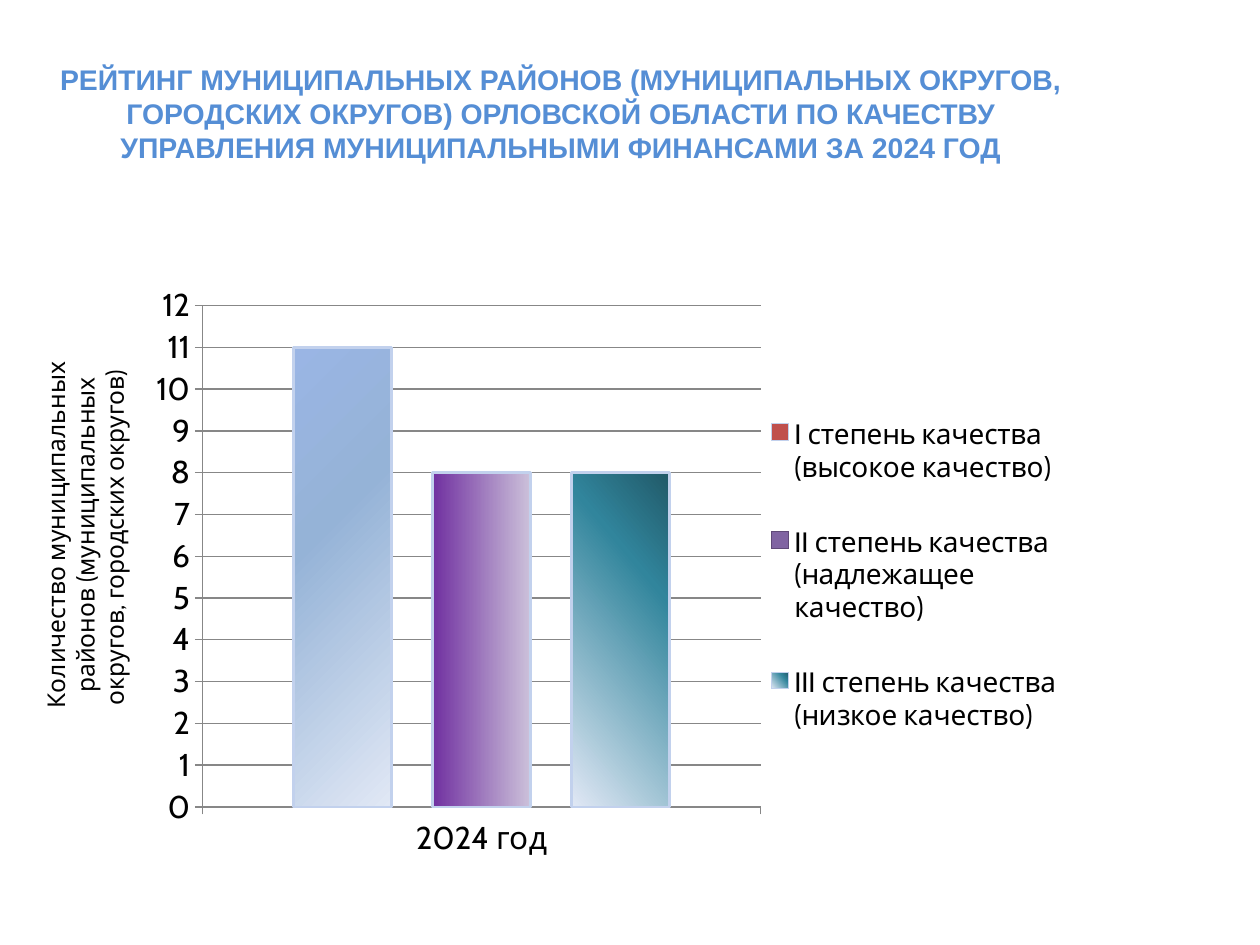
from dataclasses import dataclass

from lxml.etree import SubElement
from pptx import Presentation
from pptx.chart.data import CategoryChartData
from pptx.dml.color import RGBColor
from pptx.enum.chart import XL_CHART_TYPE, XL_LEGEND_POSITION, XL_TICK_MARK
from pptx.enum.text import MSO_ANCHOR, MSO_AUTO_SIZE, PP_ALIGN
from pptx.oxml import parse_xml
from pptx.oxml.ns import nsdecls, qn
from pptx.util import Cm, Pt


@dataclass(frozen=True)
class Theme:
    title_font: str = "Arial"
    chart_font: str = "Cabin"
    title_size: float = 16.2
    chart_size: float = 18
    legend_size: float = 16
    axis_title_size: float = 14
    title: str = "558ED5"
    title_outline: str = "5E457C"
    text: str = "000000"
    background: str = "FFFFFF"
    grid: str = "878787"
    bar_line: str = "C2D1ED"


THEME = Theme()
CHART_WIDTH, CHART_HEIGHT = 19.28, 11.99  # cm

TITLE = ("РЕЙТИНГ МУНИЦИПАЛЬНЫХ РАЙОНОВ (МУНИЦИПАЛЬНЫХ ОКРУГОВ, ГОРОДСКИХ ОКРУГОВ) "
         "ОРЛОВСКОЙ ОБЛАСТИ ПО КАЧЕСТВУ УПРАВЛЕНИЯ МУНИЦИПАЛЬНЫМИ ФИНАНСАМИ ЗА 2024 ГОД")
AXIS_TITLE = "Количество муниципальных районов (муниципальных округов, городских округов) "

# Name, value, series fill (None: gradient), series line, bar gradient, angle
GRADES = [
    ("I степень качества (высокое качество)", 11, "C0504D", THEME.bar_line,
     [(0, "9AB5E4"), (38, "95B3D7"), (100, "E1E8F5")], 45),
    ("II степень качества (надлежащее качество)", 8, "8064A2", "5F4A78",
     [(0, "CCC1DA"), (100, "7030A0"), (100, "E1E8F5")], 180),
    ("III степень качества (низкое качество)", 8, None, THEME.bar_line,
     [(0, "215968"), (29, "31859C"), (100, "E1E8F5")], 140),
]


def color(value):
    return RGBColor.from_string(value)


def style_font(font, name, size, value):
    font.name = name
    font.size = Pt(size)
    font.color.rgb = color(value)


def style_line(line, value, width):
    line.color.rgb = color(value)
    line.width = Pt(width)


def add_text(page, left, top, width, height, text, font, size, value):
    box = page.shapes.add_textbox(Cm(left), Cm(top), Cm(width), Cm(height))
    box.text_frame.word_wrap = True
    para = box.text_frame.paragraphs[0]
    para.alignment = PP_ALIGN.CENTER
    span = para.add_run()
    span.text = text
    style_font(span.font, font, size, value)
    return box, span


def add_title(page):
    box, span = add_text(page, 1.09, 0.53, 20.42, 2.79, TITLE,
                         THEME.title_font, THEME.title_size, THEME.title)
    box.fill.solid()
    box.fill.fore_color.rgb = color(THEME.background)
    frame = box.text_frame
    frame.vertical_anchor = MSO_ANCHOR.BOTTOM
    frame.margin_left = frame.margin_right = Cm(0.05)
    frame.margin_top = frame.margin_bottom = 0
    span.font.bold = True
    # Letter outline
    span.font._element.insert(0, parse_xml(
        f'<a:ln {nsdecls("a")} w="{Pt(0.71)}"><a:solidFill>'
        f'<a:srgbClr val="{THEME.title_outline}"/></a:solidFill></a:ln>'))


def add_axis_title(page):
    box, _ = add_text(page, -2.72, 9.75, 8.89, 2.06, AXIS_TITLE,
                      THEME.chart_font, THEME.axis_title_size, THEME.text)
    box.text_frame.auto_size = MSO_AUTO_SIZE.SHAPE_TO_FIT_TEXT
    box.rotation = 270


def fill_gradient(target, stops, angle):
    """Fill a series or a point; the angle runs clockwise."""
    marks = "".join(f'<a:gs pos="{position * 1000}"><a:srgbClr val="{value}"/></a:gs>'
                    for position, value in stops)
    target.format.fill.background()
    properties = target.format.fill._xPr
    properties.replace(properties.find(qn("a:noFill")), parse_xml(
        f'<a:gradFill {nsdecls("a")} rotWithShape="1"><a:gsLst>{marks}</a:gsLst>'
        f'<a:lin ang="{angle * 60000}" scaled="0"/></a:gradFill>'))


def place(parent, successors, left, top, width, height, inner=False):
    """Fix the plot area or the legend inside the chart, in centimetres."""
    for old in parent.findall(qn("c:layout")):
        parent.remove(old)
    layout = parse_xml(f'<c:layout {nsdecls("c")}/>')
    manual = SubElement(layout, qn("c:manualLayout"))
    entries = [("layoutTarget", "inner")] if inner else []
    entries += [("xMode", "edge"), ("yMode", "edge"),
                ("x", left / CHART_WIDTH), ("y", top / CHART_HEIGHT),
                ("w", width / CHART_WIDTH), ("h", height / CHART_HEIGHT)]
    for tag, value in entries:
        SubElement(manual, qn(f"c:{tag}")).set("val", str(value))
    parent.insert_element_before(layout, *successors)


def style_series(series, fill, line, stops, angle):
    style_line(series.format.line, line, 1.5)
    if fill is None:
        fill_gradient(series, stops, angle)
        return
    series.format.fill.solid()
    series.format.fill.fore_color.rgb = color(fill)
    bar = series.points[0]
    fill_gradient(bar, stops, angle)
    style_line(bar.format.line, THEME.bar_line, 1.5)


def add_rating_chart(page):
    data = CategoryChartData()
    data.categories = ["2024 год"]
    for name, value, *_ in GRADES:
        data.add_series(name, [value])
    chart = page.shapes.add_chart(XL_CHART_TYPE.COLUMN_CLUSTERED, Cm(2.77), Cm(5.54),
                                  Cm(CHART_WIDTH), Cm(CHART_HEIGHT), data).chart
    chart.has_title = False
    style_font(chart.font, THEME.chart_font, THEME.chart_size, THEME.text)

    # Bars
    plot = chart.plots[0]
    plot.vary_by_categories = False
    plot.gap_width = 186
    plot.overlap = -42
    for series, (_, _, *style) in zip(plot.series, GRADES):
        style_series(series, *style)

    # Axes
    counts = chart.value_axis
    counts.minimum_scale, counts.maximum_scale, counts.major_unit = 0, 12, 1
    counts.has_major_gridlines = True
    style_line(counts.major_gridlines.format.line, THEME.grid, 0.75)
    for axis in (chart.category_axis, counts):
        axis.major_tick_mark = XL_TICK_MARK.OUTSIDE
        style_line(axis.format.line, THEME.grid, 0.75)

    # Legend
    chart.has_legend = True
    legend = chart.legend
    legend.position = XL_LEGEND_POSITION.RIGHT
    legend.include_in_layout = False
    style_font(legend.font, THEME.chart_font, THEME.legend_size, THEME.text)

    place(chart._chartSpace.chart.plotArea, ["c:barChart"], 1.31, 0.62, 11.26, 10.11, inner=True)
    place(legend._element, ["c:overlay", "c:spPr", "c:txPr"], 12.38, 2.04, 6.55, 8.03)


def main():
    deck = Presentation()
    deck.slide_width, deck.slide_height = Cm(25.4), Cm(19.05)
    page = deck.slides.add_slide(deck.slide_layouts[6])
    add_title(page)
    add_rating_chart(page)
    add_axis_title(page)
    deck.save("out.pptx")


if __name__ == "__main__":
    main()
